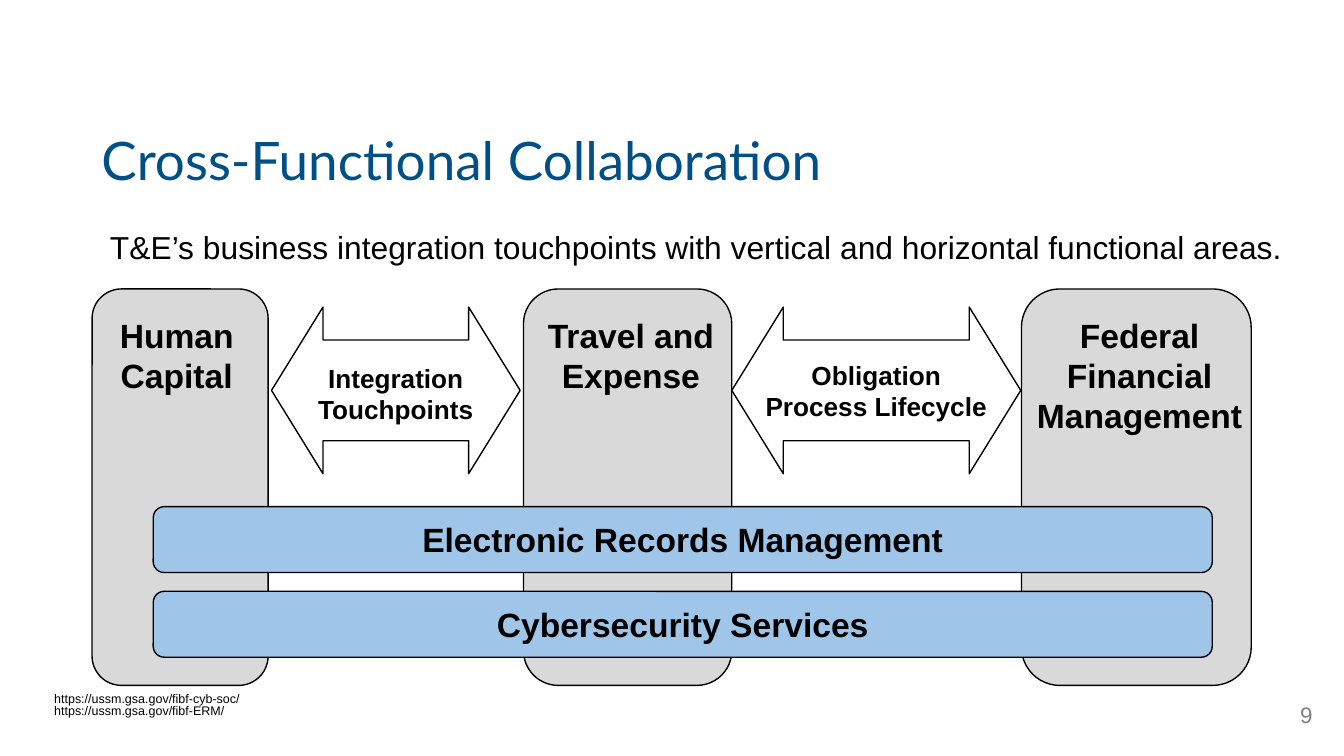
"""Build the Cross-Functional Collaboration slide on a grid of 100 columns."""
from dataclasses import dataclass

from pptx import Presentation
from pptx.dml.color import RGBColor
from pptx.enum.shapes import MSO_SHAPE
from pptx.enum.text import MSO_ANCHOR, MSO_AUTO_SIZE, PP_ALIGN
from pptx.util import Inches, Pt

ROUNDED, ARROW = MSO_SHAPE.ROUNDED_RECTANGLE, MSO_SHAPE.LEFT_RIGHT_ARROW
LEFT, CENTER, RIGHT = PP_ALIGN.LEFT, PP_ALIGN.CENTER, PP_ALIGN.RIGHT
TOP, MIDDLE = MSO_ANCHOR.TOP, MSO_ANCHOR.MIDDLE
NO_FIT = MSO_AUTO_SIZE.NONE
TITLE_ONLY = 5
COLUMNS = 100
ROWS = COLUMNS * 9 / 16


@dataclass(frozen=True)
class Theme:
    title_font: str = "Lato"
    body_font: str = "Arial"
    title: str = "005087"
    ink: str = "000000"
    muted: str = "808080"
    pillar: str = "D9D9D9"
    bar: str = "9FC5E8"
    arrow: str = "FFFFFF"
    title_size: float = 28.4
    lead_size: float = 17
    label_size: float = 18
    arrow_size: float = 14
    number_size: float = 12
    link_size: float = 6.7
    line: float = 0.75


def write(tf, text, font, size, color, bold=False, align=LEFT, anchor=TOP,
          spacing=1.0, after=0, inset=0.1):
    tf.word_wrap, tf.auto_size, tf.vertical_anchor = True, NO_FIT, anchor
    tf.margin_left = tf.margin_right = Inches(0.1)
    tf.margin_top = tf.margin_bottom = Inches(inset)
    tf.text = text
    for p in tf.paragraphs:
        p.alignment, p.line_spacing = align, spacing
        p.space_before, p.space_after = Pt(0), Pt(after)
        p.font.name, p.font.size, p.font.bold = font, Pt(size), bold
        p.font.color.rgb = RGBColor.from_string(color)


class Deck:
    def __init__(self, theme):
        self.theme = theme
        self.prs = Presentation()
        self.prs.slide_width = Inches(10)
        self.prs.slide_height = Inches(10 * 9 / 16)
        self.s = self.prs.slides.add_slide(self.prs.slide_layouts[TITLE_ONLY])

    def box(self, x, y, w, h):
        dx, dy = self.prs.slide_width / COLUMNS, self.prs.slide_height / ROWS
        return int(x * dx), int(y * dy), int(w * dx), int(h * dy)

    def title(self, text, *cells):
        sp, t = self.s.shapes.title, self.theme
        sp.left, sp.top, sp.width, sp.height = self.box(*cells)
        write(sp.text_frame, text, t.title_font, t.title_size, t.title,
              anchor=MIDDLE, spacing=0.8, inset=0.05)

    def text(self, text, *cells, size, color=None, **style):
        sp = self.s.shapes.add_textbox(*self.box(*cells))
        write(sp.text_frame, text, self.theme.body_font, size,
              color or self.theme.ink, **style)

    def label(self, text, *cells, size=None):
        self.text(text, *cells, size=size or self.theme.label_size,
                  bold=True, align=CENTER)

    def shape(self, kind, fill, *cells, adjust=(0.167,)):
        sp = self.s.shapes.add_shape(kind, *self.box(*cells))
        sp.shadow.inherit = False
        sp.fill.solid()
        sp.fill.fore_color.rgb = RGBColor.from_string(fill)
        sp.line.color.rgb = RGBColor.from_string(self.theme.ink)
        sp.line.width = Pt(self.theme.line)
        for i, value in enumerate(adjust):
            sp.adjustments[i] = value

    def pillar(self, text, x, w, label_x, label_w):
        self.shape(ROUNDED, self.theme.pillar, x, 21.5, w, 29.5)
        self.label(text, label_x, 22.4, label_w, 11.1)

    def arrow(self, text, x, w, label_x, label_y):
        self.shape(ARROW, self.theme.arrow, x, 22.85, w, 12.4,
                   adjust=(0.605, 0.309))
        self.label(text, label_x, label_y, 18.6, 6.7,
                   size=self.theme.arrow_size)

    def bar(self, text, y):
        self.shape(ROUNDED, self.theme.bar, 11.4, y, 78.8, 4.9)
        self.label(text, 17.4, y - 0.05, 66.8, 5)


def main():
    theme = Theme()
    deck = Deck(theme)
    deck.title("Cross-Functional Collaboration", 6.55, 10.1, 80.9, 4.4)
    deck.text("T&E’s business integration touchpoints with vertical and "
              "horizontal functional areas.", 7.2, 15.5, 90.4, 4.9,
              size=theme.lead_size, spacing=1.15, after=12)
    for pillar in (("Federal Financial Management", 76, 17.1, 76, 17.6),
                   ("Travel and Expense", 38.95, 15.5, 38.95, 16),
                   ("Human Capital", 6.85, 13.1, 6.6, 13.1)):
        deck.pillar(*pillar)
    deck.arrow("Obligation Process Lifecycle", 54.45, 21.5, 55.9, 25.75)
    for i, name in enumerate(("Electronic Records Management",
                              "Cybersecurity Services")):
        deck.bar(name, 37.7 + 6.3 * i)
    deck.arrow("Integration Touchpoints", 20.2, 18.5, 20.15, 25.95)
    deck.text("https://ussm.gsa.gov/fibf-cyb-soc/\n"
              "https://ussm.gsa.gov/fibf-ERM/", 3.05, 50.65, 41.6, 3.9,
              size=theme.link_size, spacing=0.8)
    deck.text("9", 92.65, 51.05, 6, 4.3, size=theme.number_size,
              color=theme.muted, align=RIGHT, anchor=MIDDLE, inset=0.05)
    deck.prs.save("out.pptx")


if __name__ == "__main__":
    main()
